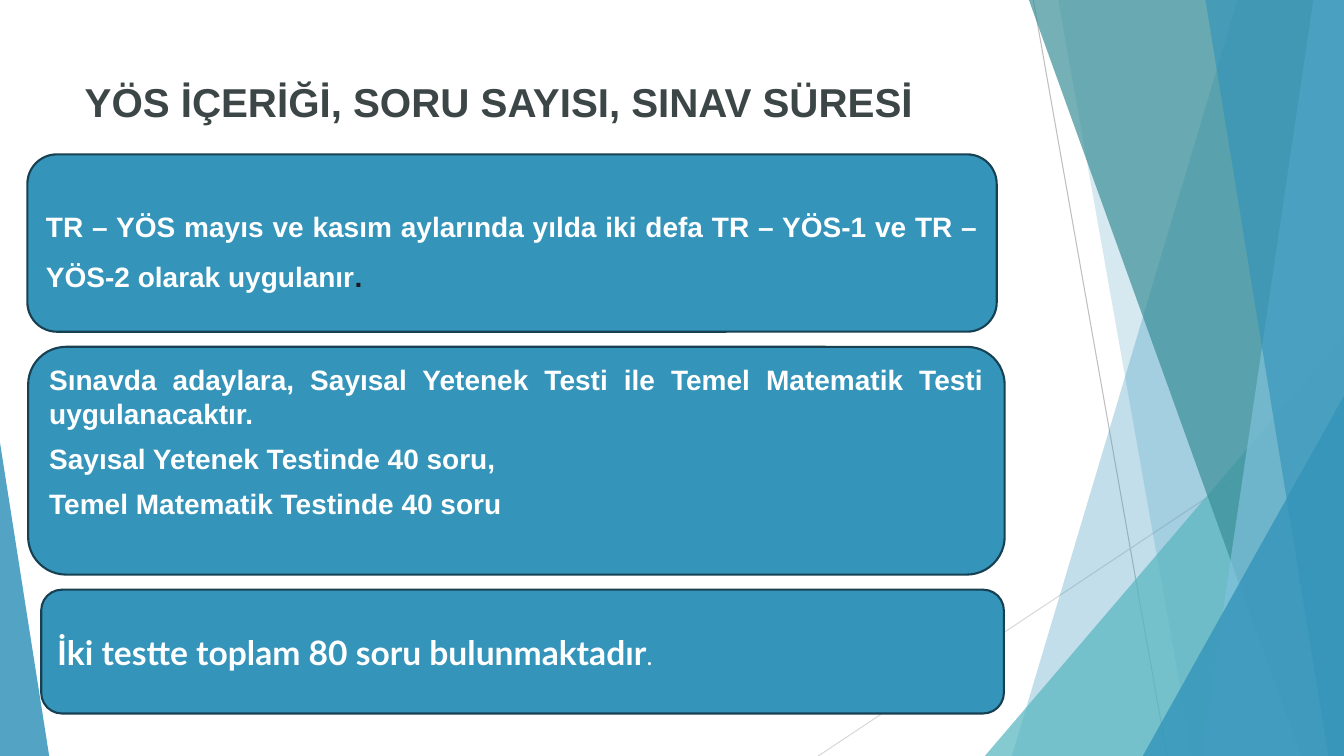
from pptx import Presentation
from pptx import util as u
from pptx.dml import color
from pptx.enum import shapes, text
from pptx.oxml import ns
from lxml import etree

COLORS = {
    "blue": "3494BA", "turquoise": "58B6C0", "teal": "3A8F98", "sky": "7FC1DB",
    "outline": "174152", "title": "3D4647", "white": "FFFFFF", "stop": "191919",
    "line": "BFBFBF", "pale_line": "D9D9D9",
}
WIDTH, HEIGHT = 33.87, 19.05


def rgb(name):
    """Return the named palette colour."""
    return color.RGBColor.from_string(COLORS[name])


def add_text(paragraph, words, size=20, font="Arial", fill="white", bold=True):
    """Append a formatted run to a paragraph."""
    run = paragraph.add_run()
    run.text = words
    run.font.size = u.Pt(size)
    run.font.name = font
    run.font.bold = bold
    run.font.color.rgb = rgb(fill)


def paint(shape, fill, opacity):
    """Give a shape a translucent fill without line or shadow."""
    shape.shadow.inherit = False
    shape.line.fill.background()
    shape.fill.solid()
    shape.fill.fore_color.rgb = rgb(fill)
    tint = shape.fill._xPr.find(".//" + ns.qn("a:srgbClr"))
    etree.SubElement(tint, ns.qn("a:alpha"), val=str(opacity * 1000))


def add_line(slide, start, end, tone):
    """Draw a thin straight line."""
    line = slide.shapes.add_connector(
        shapes.MSO_CONNECTOR.STRAIGHT, *[u.Cm(value) for value in start + end])
    line.line.color.rgb = rgb(tone)
    line.line.width = u.Pt(0.75)
    etree.SubElement(line._element.spPr, ns.qn("a:effectLst"))


def add_triangle(slide, left, top, width, height, apex, fill, opacity):
    """Draw a right triangle whose apex is at the left (0) or right (1)."""
    triangle = slide.shapes.add_shape(
        shapes.MSO_SHAPE.ISOSCELES_TRIANGLE,
        *[u.Cm(value) for value in (left, top, width, height)])
    triangle.adjustments[0] = apex
    paint(triangle, fill, opacity)


def add_facet(slide, box, top_x, bottom_x, fill, opacity):
    """Draw a facet from a slanted left edge to the right side of the box."""
    left, top, width, height = box
    right, bottom = left + width, top + height
    corners = [(left + top_x, top), (right, top), (right, bottom), (left + bottom_x, bottom)]
    points = [(u.Cm(x), u.Cm(y)) for x, y in corners]
    builder = slide.shapes.build_freeform(*points[0])
    builder.add_line_segments(points[1:], close=True)
    paint(builder.convert_to_shape(), fill, opacity)


def add_right_decoration(slide, box):
    """Layer lines, facets and triangles along the right side."""
    left, top, width, height = box
    right, bottom = left + width, top + height
    add_line(slide, (left + 5.42, top), (left + 8.79, bottom), "line")
    add_line(slide, (right, top + 10.24), (left, bottom), "pale_line")

    def corner(offset, drop, fill, opacity):
        """Fill the lower right corner with a triangle."""
        add_triangle(slide, left + offset, top + drop, width - offset, height - drop,
                     1, fill, opacity)

    add_facet(slide, box, 10.57, 4.88, "blue", 30)
    add_facet(slide, box, 6.05, 9.43, "blue", 20)
    corner(4.2, 8.46, "turquoise", 72)
    for facet in [(5.31, 12.17, "teal", 70), (12.48, 9.66, "sky", 70), (9.76, 12.86, "blue", 65)]:
        add_facet(slide, box, *facet)
    corner(8.18, 9.98, "blue", 80)


def add_title(slide, box, words):
    """Place the slide title in its placeholder."""
    title = slide.shapes.title
    title.left, title.top, title.width, title.height = [u.Cm(value) for value in box]
    frame = title.text_frame
    frame.word_wrap = True
    frame.auto_size = text.MSO_AUTO_SIZE.NONE
    frame.vertical_anchor = text.MSO_ANCHOR.TOP
    frame.margin_top = u.Cm(0.25)
    frame.paragraphs[0].alignment = text.PP_ALIGN.LEFT
    add_text(frame.paragraphs[0], words, size=28.8, fill="title")


def add_card(slide, box, paragraphs, anchor=text.MSO_ANCHOR.MIDDLE,
             align=text.PP_ALIGN.JUSTIFY, spacing=1.0, after=8):
    """Draw a rounded card holding paragraphs of (words, format) runs."""
    card = slide.shapes.add_shape(
        shapes.MSO_SHAPE.ROUNDED_RECTANGLE, *[u.Cm(value) for value in box])
    card.shadow.inherit = False
    card.fill.solid()
    card.fill.fore_color.rgb = rgb("blue")
    card.line.color.rgb = rgb("outline")
    card.line.width = u.Pt(1.5)
    frame = card.text_frame
    frame.word_wrap = True
    frame.vertical_anchor = anchor
    for index, runs in enumerate(paragraphs):
        paragraph = frame.add_paragraph() if index else frame.paragraphs[0]
        paragraph.alignment = align
        paragraph.line_spacing = spacing
        paragraph.space_after = u.Pt(after)
        for words, style in runs:
            add_text(paragraph, words, **style)


def add_cards(slide, box):
    """Stack the three exam facts inside the box."""
    left, top, width, height = box
    add_card(slide, (left, top, width - 0.18, 4.47), [[
        ("TR – YÖS mayıs ve kasım aylarında yılda iki defa "
         "TR – YÖS-1 ve TR – YÖS-2 olarak uygulanır", {}),
        (".", {"fill": "stop"}),
    ]], spacing=1.5)
    add_card(slide, (left + 0.02, top + 4.85, width, 5.74), [
        [("Sınavda adaylara, Sayısal Yetenek Testi ile Temel Matematik Testi uygulanacaktır.", {})],
        [("Sayısal Yetenek Testinde 40 soru,", {})],
        [("Temel Matematik Testinde 40 soru", {})],
    ], anchor=text.MSO_ANCHOR.TOP)
    add_card(slide, (left + 0.35, top + height - 3.12, width - 0.35, 3.12), [[
        ("İki testte toplam 80 soru bulunmaktadır", {"size": 24, "font": "Lato"}),
        (".", {"size": 18, "font": "Lato", "bold": False}),
    ]], align=text.PP_ALIGN.LEFT, after=0)


def main():
    """Build and save the presentation."""
    presentation = Presentation()
    presentation.slide_width = u.Cm(WIDTH)
    presentation.slide_height = u.Cm(HEIGHT)
    slide = presentation.slides.add_slide(presentation.slide_layouts[5])
    add_right_decoration(slide, (20.62, 0, WIDTH - 20.62, HEIGHT))
    add_triangle(slide, 0, 11.15, 1.24, HEIGHT - 11.15, 0, "blue", 85)
    add_title(slide, (1.88, 1.7, 23.88, 3.66), "YÖS İÇERİĞİ, SORU SAYISI, SINAV SÜRESİ")
    add_cards(slide, (0.69, 3.89, 24.61, 14.09))
    presentation.save("out.pptx")


if __name__ == "__main__":
    main()
